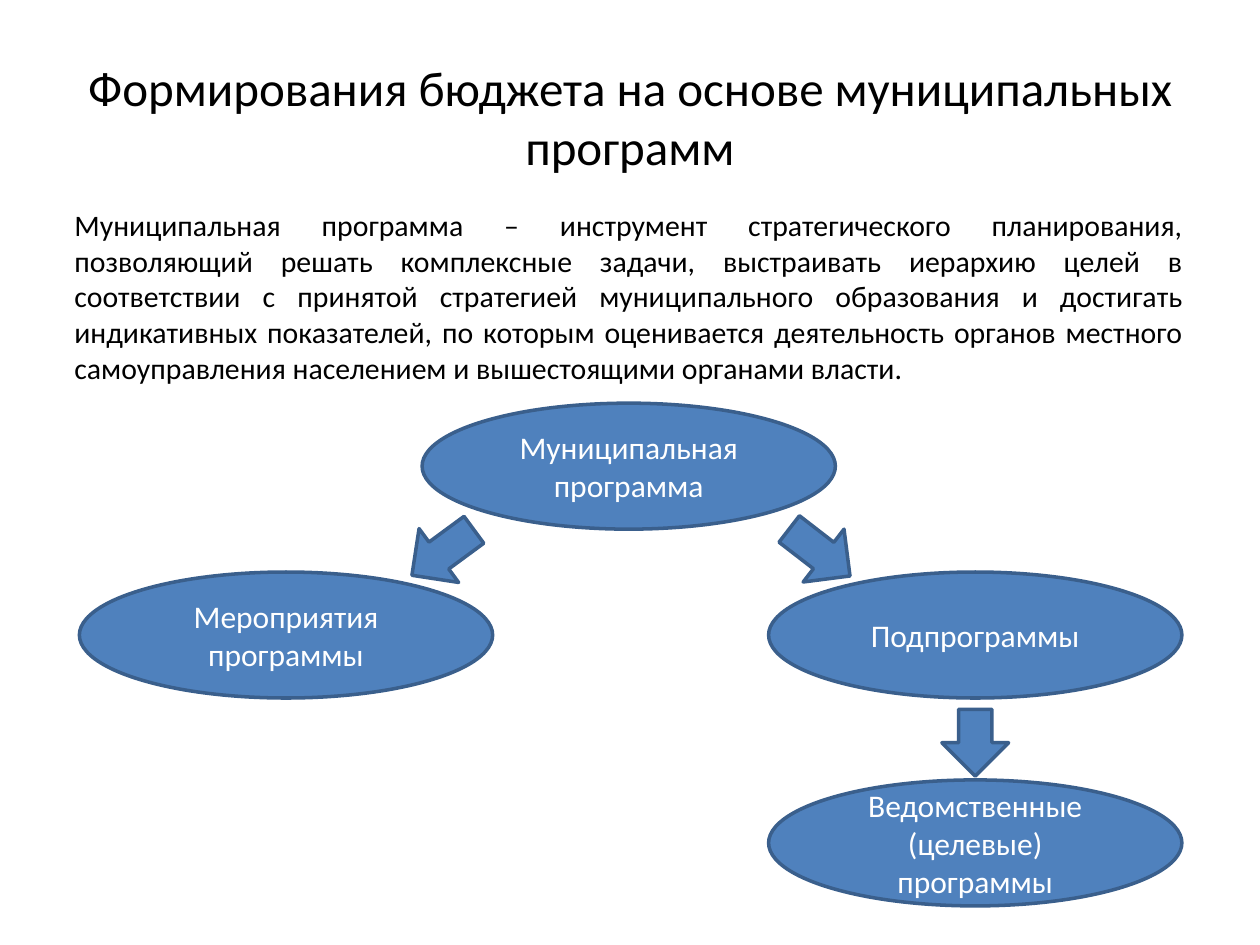
from lxml import etree
from pptx import Presentation
from pptx.dml.color import RGBColor
from pptx.enum.shapes import MSO_SHAPE
from pptx.enum.text import MSO_ANCHOR, MSO_AUTO_SIZE, PP_ALIGN
from pptx.oxml.ns import qn
from pptx.util import Inches, Pt

ELLIPSE, ARROW = MSO_SHAPE.OVAL, MSO_SHAPE.RIGHT_ARROW
CENTER, JUSTIFY = PP_ALIGN.CENTER, PP_ALIGN.JUSTIFY
TOP, MIDDLE = MSO_ANCHOR.TOP, MSO_ANCHOR.MIDDLE
NO_AUTOFIT = MSO_AUTO_SIZE.NONE

COLORS = {"text": "000000", "fill": "4F81BD", "line": "3A5F8C", "label": "FFFFFF"}
FONT = "Calibri"
COLS, ROWS = 100, 75

NODE_W, NODE_H = 32.8, 10
LEFT, MID, RIGHT = 6.3, 33.5, 61
ROOT_ROW, CHILD_ROW, LEAF_ROW = 32, 45.4, 61.9

TITLE = "Формирования бюджета на основе муниципальных программ"
DEFINITION = (
    "Муниципальная программа – инструмент стратегического планирования, "
    "позволяющий решать комплексные задачи, выстраивать иерархию целей в "
    "соответствии с принятой стратегией муниципального образования и достигать "
    "индикативных показателей, по которым оценивается деятельность органов "
    "местного самоуправления населением и вышестоящими органами власти."
)
NODES = [
    ("Мероприятия программы", LEFT, CHILD_ROW),
    ("Ведомственные (целевые) программы", RIGHT, LEAF_ROW),
    ("Подпрограммы", RIGHT, CHILD_ROW),
    ("Муниципальная программа", MID, ROOT_ROW),
]
# Centre column, centre row, length, rotation
ARROWS = [
    (35.15, 43.85, 6.1, 143.7),
    (65.05, 43.85, 6.1, 37.7),
    (RIGHT + NODE_W / 2, 58.95, 5.3, 90),
]
ARROW_H = 5.3


def color(name):
    return RGBColor.from_string(COLORS[name])


class Deck:
    def __init__(self):
        self.prs = Presentation()
        self.prs.slide_width, self.prs.slide_height = Inches(10), Inches(7.5)
        self.slide = self.prs.slides.add_slide(self.prs.slide_layouts[1])

    def box(self, col, row, cols, rows):
        """Convert grid units to left, top, width and height."""
        x, y = self.prs.slide_width / COLS, self.prs.slide_height / ROWS
        return [round(v) for v in (col * x, row * y, cols * x, rows * y)]

    def set_text(self, sp, text, size, ink, align, anchor):
        tf = sp.text_frame
        tf.text = text
        tf.word_wrap = True
        tf.auto_size = NO_AUTOFIT
        tf.vertical_anchor = anchor
        p = tf.paragraphs[0]
        p.alignment = align
        font = p.runs[0].font
        font.name, font.size, font.color.rgb = FONT, Pt(size), color(ink)
        return p

    def placeholder(self, idx, text, box, size, align, anchor):
        sp = self.slide.placeholders[idx]
        sp.left, sp.top, sp.width, sp.height = self.box(*box)
        return self.set_text(sp, text, size, "text", align, anchor)

    def title(self, text):
        self.placeholder(0, text, (5, 3, 90, 12.5), 28, CENTER, MIDDLE)

    def body(self, text):
        p = self.placeholder(1, text, (4.9, 15.9, 90, 16.1), 17, JUSTIFY, TOP)
        pPr = p._p.get_or_add_pPr()
        pPr.set("marL", "0")
        pPr.set("indent", "0")
        etree.SubElement(pPr, qn("a:buNone"))

    def shape(self, kind, *box):
        sp = self.slide.shapes.add_shape(kind, *self.box(*box))
        sp.shadow.inherit = False
        sp.fill.solid()
        sp.fill.fore_color.rgb = color("fill")
        sp.line.color.rgb = color("line")
        sp.line.width = Pt(2)
        return sp

    def node(self, text, col, row):
        sp = self.shape(ELLIPSE, col, row, NODE_W, NODE_H)
        self.set_text(sp, text, 18, "label", CENTER, MIDDLE)

    def arrow(self, col, row, length, angle):
        sp = self.shape(ARROW, col - length / 2, row - ARROW_H / 2, length, ARROW_H)
        sp.rotation = angle


def main():
    deck = Deck()
    deck.title(TITLE)
    deck.body(DEFINITION)
    for node in NODES:
        deck.node(*node)
    for arrow in ARROWS:
        deck.arrow(*arrow)
    deck.prs.save("out.pptx")


if __name__ == "__main__":
    main()
